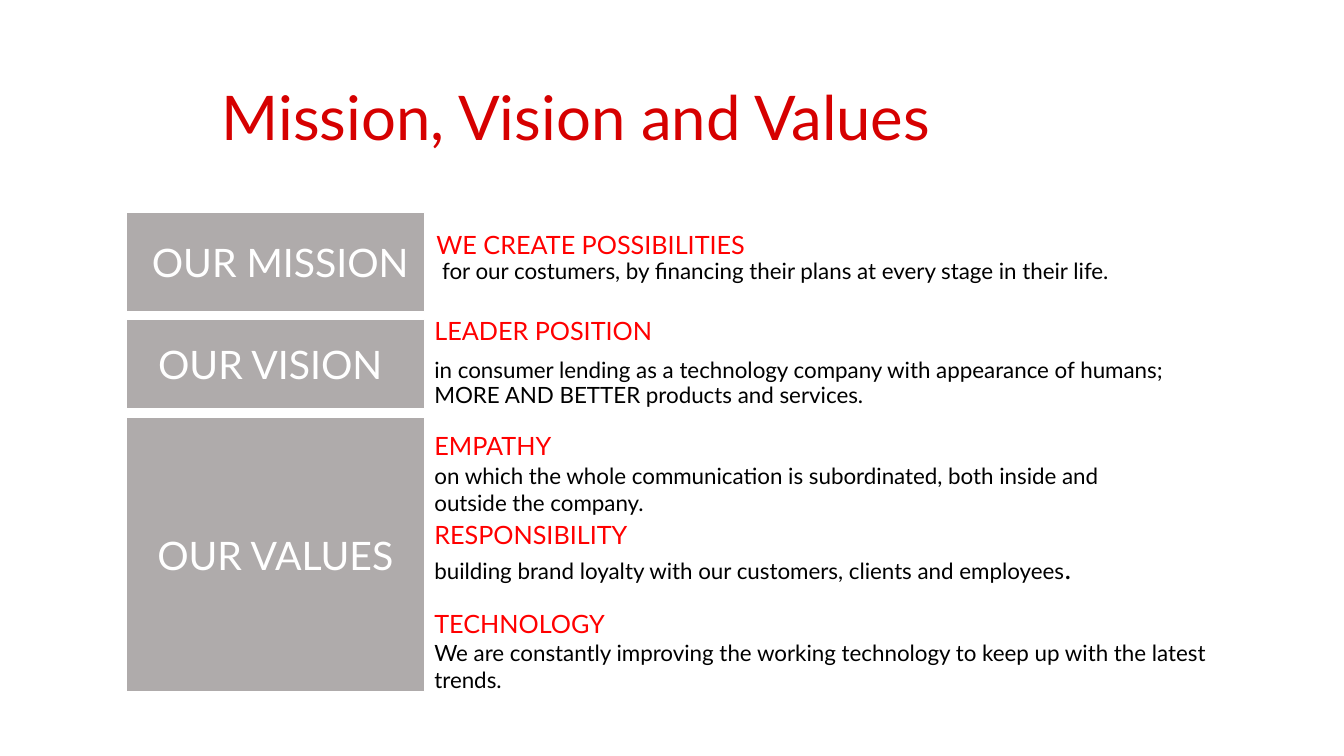
"""Build the Mission, Vision and Values slide."""
from dataclasses import dataclass

import pptx
import pptx.dml.color
import pptx.enum.shapes
import pptx.enum.text
import pptx.util

Inches = pptx.util.Inches
Pt = pptx.util.Pt
RED = "FF0000"
BLACK = "000000"
WHITE = "FFFFFF"
GREY = "AFABAB"
LABEL_LEFT, LABEL_WIDTH = 1.25, 2.96


@dataclass
class Label:
    text: str
    top: float
    height: float


@dataclass
class Statement:
    heading: str
    body: str
    left: float
    top: float
    width: float
    height: float
    line_spacing: float = 1.0
    space_before: float = 0
    heading_tail: str = ""
    tail_font: str = "Lato"
    ending: str = ""


LABELS = [
    Label(" OUR MISSION", 2.11, 0.98),
    Label("OUR VISION ", 3.17, 0.88),
    Label("OUR VALUES", 4.14, 2.72),
]

STATEMENTS = [
    Statement("WE CREATE POSSIBILITIES",
              " for our costumers, by financing their plans at every stage in their life.",
              4.23, 2.26, 8.21, 0.83, line_spacing=0.9),
    Statement("LEADER POSITION",
              "in consumer lending as a technology company with appearance of humans; "
              "MORE AND BETTER products and services.",
              4.21, 3.11, 7.93, 1.37, line_spacing=0.9, space_before=10),
    Statement("EMPATHY",
              "on which the whole communication is subordinated, both inside and "
              "outside the company.",
              4.21, 4.14, 6.99, 1.04, heading_tail=" ", tail_font="Calibri"),
    Statement("RESPONSIBILITY",
              "building brand loyalty with our customers, clients and employees",
              4.21, 5.02, 8.3, 0.84, heading_tail=" ", ending="."),
    Statement("TECHNOLOGY",
              "We are constantly improving the working technology to keep up with "
              "the latest trends.",
              4.21, 5.99, 8.3, 1.21),
]


def rgb(value: str) -> pptx.dml.color.RGBColor:
    return pptx.dml.color.RGBColor.from_string(value)


def add_text(p, text: str, *, size: float, color: str = BLACK, font: str = "Lato") -> None:
    r = p.add_run()
    r.text = text
    r.font.size = Pt(size)
    r.font.name = font
    r.font.color.rgb = rgb(color)


def add_box(s, left: float, top: float, width: float, height: float):
    tf = s.shapes.add_textbox(Inches(left), Inches(top), Inches(width), Inches(height)).text_frame
    tf.word_wrap = True
    return tf


def draw_title(s) -> None:
    tf = add_box(s, 2.1, 0.47, 7.65, 1.45)
    tf.vertical_anchor = pptx.enum.text.MSO_ANCHOR.MIDDLE
    p = tf.paragraphs[0]
    p.line_spacing = 0.9
    add_text(p, "Mission, Vision and Values", size=44, color="D60000")


def draw_label(s, label: Label) -> None:
    sp = s.shapes.add_shape(pptx.enum.shapes.MSO_SHAPE.RECTANGLE, Inches(LABEL_LEFT),
                            Inches(label.top), Inches(LABEL_WIDTH), Inches(label.height))
    sp.shadow.inherit = False
    sp.fill.solid()
    sp.fill.fore_color.rgb = rgb(GREY)
    sp.line.color.rgb = rgb(WHITE)
    sp.line.width = Pt(1)
    tf = sp.text_frame
    tf.vertical_anchor = pptx.enum.text.MSO_ANCHOR.MIDDLE
    p = tf.paragraphs[0]
    p.alignment = pptx.enum.text.PP_ALIGN.CENTER
    add_text(p, label.text, size=28, color=WHITE)


def draw_statement(s, item: Statement) -> None:
    tf = add_box(s, item.left, item.top, item.width, item.height)
    p = tf.paragraphs[0]
    p.line_spacing = item.line_spacing
    add_text(p, item.heading, size=18, color=RED)
    if item.heading_tail:
        add_text(p, item.heading_tail, size=24, font=item.tail_font)
    p = tf.add_paragraph()
    p.line_spacing = item.line_spacing
    p.space_before = Pt(item.space_before)
    add_text(p, item.body, size=16)
    if item.ending:
        add_text(p, item.ending, size=20)


def main() -> None:
    prs = pptx.Presentation()
    prs.slide_width, prs.slide_height = Inches(13.33), Inches(7.5)
    s = prs.slides.add_slide(prs.slide_layouts[6])
    draw_title(s)
    for item in STATEMENTS:
        draw_statement(s, item)
    for label in LABELS:
        draw_label(s, label)
    prs.save("out.pptx")


if __name__ == "__main__":
    main()
